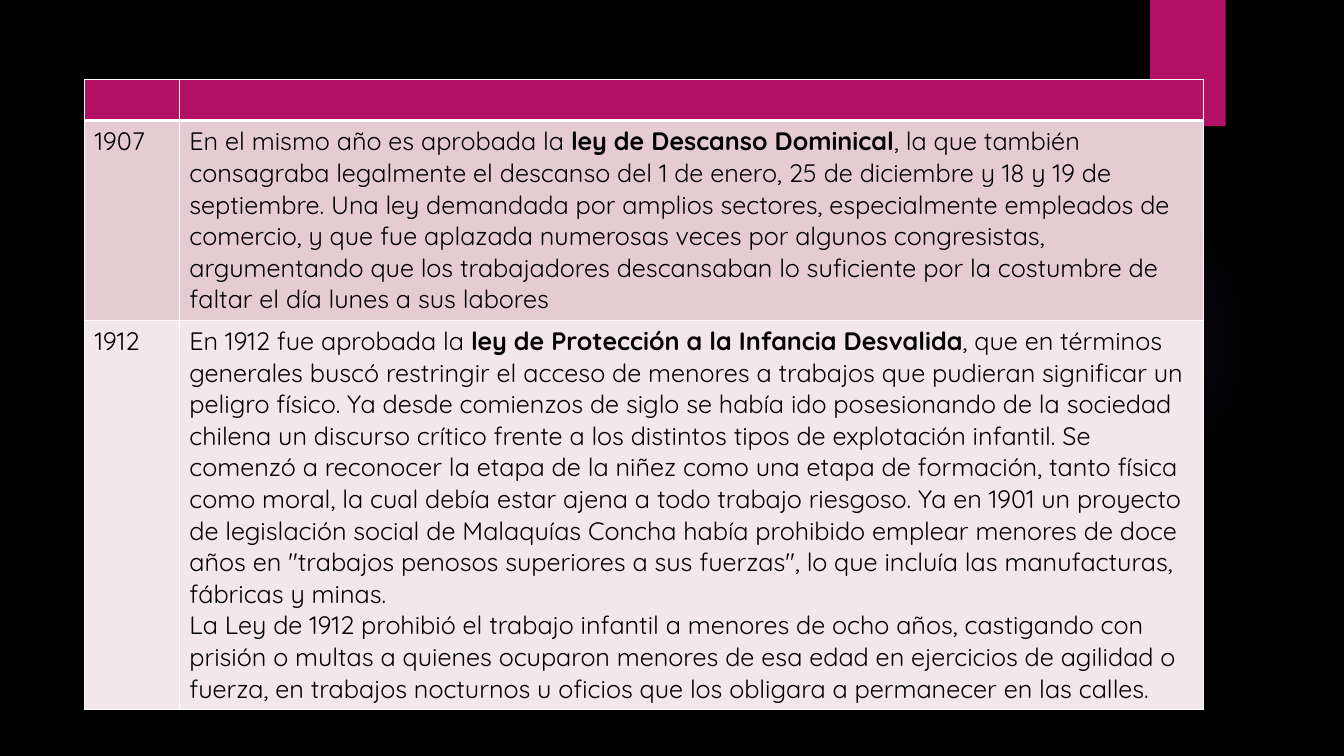
from dataclasses import dataclass

from pptx import Presentation
from pptx.dml.color import RGBColor
from pptx.enum.shapes import MSO_SHAPE
from pptx.oxml import parse_xml
from pptx.oxml.ns import nsdecls, qn
from pptx.util import Cm, Pt


@dataclass(frozen=True)
class Theme:
    background: str = "000000"
    accent: str = "B31166"
    glow: str = "9B6BF2"
    bands: tuple = ("E5CCD3", "F2E7EA")
    border: str = "FFFFFF"
    text: str = "000000"
    font: str = "Quicksand"
    size: int = 18
    thin: int = 1
    thick: int = 3


THEME = Theme()
GLOW_STOPS = ((0, 7), (36, 6), (69, 0))  # position and opacity, in percent
COLUMN_WIDTHS = (2.39, 25.81)
ROW_HEIGHTS = (1.04, 5.01, 9.8)

# Each law: year, then paragraphs made of (text, bold) spans.
LAWS = (
    ("1907", (
        (("En el mismo año es aprobada la ", False),
         ("ley de Descanso Dominical", True),
         (", la que también consagraba legalmente el descanso del 1 de enero, "
          "25 de diciembre y 18 y 19 de septiembre. Una ley demandada por amplios "
          "sectores, especialmente empleados de comercio, y que fue aplazada numerosas "
          "veces por algunos congresistas, argumentando que los trabajadores descansaban "
          "lo suficiente por la costumbre de faltar el día lunes a sus labores", False)),
    )),
    ("1912", (
        (("En 1912 fue aprobada la ", False),
         ("ley de Protección a la Infancia Desvalida", True),
         (", que en términos generales buscó restringir el acceso de menores a trabajos "
          "que pudieran significar un peligro físico. Ya desde comienzos de siglo se había "
          "ido posesionando de la sociedad chilena un discurso crítico frente a los "
          "distintos tipos de explotación infantil. Se comenzó a reconocer la etapa de la "
          "niñez como una etapa de formación, tanto física como moral, la cual debía estar "
          "ajena a todo trabajo riesgoso. Ya en 1901 un proyecto de legislación social de "
          "Malaquías Concha había prohibido emplear menores de doce años en \"trabajos "
          "penosos superiores a sus fuerzas\", lo que incluía las manufacturas, fábricas "
          "y minas.", False)),
        (("La Ley de 1912 prohibió el trabajo infantil a menores de ocho años, castigando "
          "con prisión o multas a quienes ocuparon menores de esa edad en ejercicios de "
          "agilidad o fuerza, en trabajos nocturnos u oficios que los obligara a permanecer "
          "en las calles.", False),),
    )),
)


def paint(fill, color):
    fill.solid()
    fill.fore_color.rgb = RGBColor.from_string(color)


def add_plain_shape(page, kind, box, color):
    shape = page.shapes.add_shape(kind, *map(Cm, box))
    shape.shadow.inherit = False
    shape.line.fill.background()
    paint(shape.fill, color)
    return shape


def add_glow(page, box):
    """Place a faint radial light that fades outwards."""
    glow = add_plain_shape(page, MSO_SHAPE.OVAL, box, THEME.glow)
    stops = "".join(
        f'<a:gs pos="{position * 1000}"><a:srgbClr val="{THEME.glow}">'
        f'<a:alpha val="{opacity * 1000}"/></a:srgbClr></a:gs>'
        for position, opacity in GLOW_STOPS)
    gradient = parse_xml(
        f'<a:gradFill {nsdecls("a")}><a:gsLst>{stops}</a:gsLst><a:path path="circle">'
        '<a:fillToRect l="50000" t="50000" r="50000" b="50000"/></a:path></a:gradFill>')
    properties = glow.element.spPr
    properties.replace(properties.find(qn("a:solidFill")), gradient)


def add_borders(cell, widths):
    properties = cell._tc.get_or_add_tcPr()
    for side, width in widths.items():
        properties.append(parse_xml(
            f'<a:ln{side} {nsdecls("a")} w="{Pt(width)}"><a:solidFill>'
            f'<a:srgbClr val="{THEME.border}"/></a:solidFill></a:ln{side}>'))


def write_cell(cell, paragraphs):
    frame = cell.text_frame
    for index, spans in enumerate(paragraphs):
        para = frame.add_paragraph() if index else frame.paragraphs[0]
        for text, bold in spans:
            span = para.add_run()
            span.text = text
            formats = {"name": THEME.font, "size": Pt(THEME.size), "bold": bold}
            for name, value in formats.items():
                setattr(span.font, name, value)
            span.font.color.rgb = RGBColor.from_string(THEME.text)


def add_law_table(page, left, top):
    table = page.shapes.add_table(
        len(ROW_HEIGHTS), len(COLUMN_WIDTHS), Cm(left), Cm(top),
        Cm(sum(COLUMN_WIDTHS)), Cm(sum(ROW_HEIGHTS))).table
    for column, width in zip(table.columns, COLUMN_WIDTHS):
        column.width = Cm(width)
    for index, (row, height) in enumerate(zip(table.rows, ROW_HEIGHTS)):
        row.height = Cm(height)
        widths = dict.fromkeys("LRTB", THEME.thin)
        if index < 2:  # the heavy rule is shared by the header and the first law
            widths["T" if index else "B"] = THEME.thick
        for cell in row.cells:
            add_borders(cell, widths)
            paint(cell.fill, THEME.bands[index - 1] if index else THEME.accent)
    for index, (year, paragraphs) in enumerate(LAWS, start=1):
        write_cell(table.cell(index, 0), (((year, False),),))
        write_cell(table.cell(index, 1), paragraphs)


def main():
    deck = Presentation()
    deck.slide_width, deck.slide_height = Cm(33.87), Cm(19.05)
    page = deck.slides.add_slide(deck.slide_layouts[6])
    paint(page.background.fill, THEME.background)
    add_glow(page, (23.9, 4.65, 7.82, 7.82))
    add_plain_shape(page, MSO_SHAPE.RECTANGLE, (28.98, 0, 1.91, 3.18), THEME.accent)
    add_law_table(page, 2.13, 2)
    deck.save("out.pptx")


if __name__ == "__main__":
    main()
